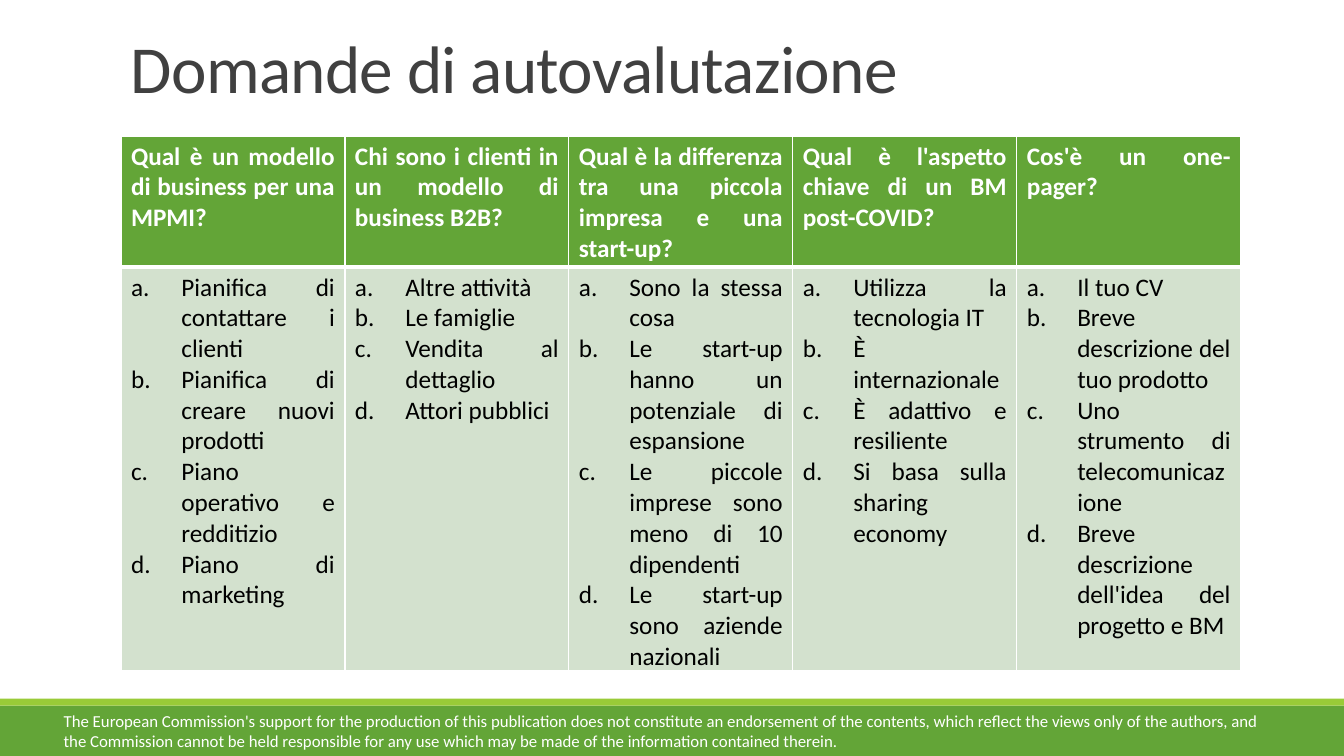
from pptx import Presentation, util as u
from pptx.dml.color import RGBColor
from pptx.enum import shapes, text
from pptx.oxml import parse_xml
from pptx.oxml.ns import nsdecls

WIDE, HIGH = u.Inches(13.33), u.Inches(7.5)
GREEN, LIME, PALE, WHITE = "63A537", "99CB38", "D3E1CE", "FFFFFF"
TITLE = "Domande di autovalutazione"
NOTE = ("The European Commission's support for the production of this publication "
        "does not constitute an endorsement of the contents, which reflect the views "
        "only of the authors, and the Commission cannot be held responsible for any "
        "use which may be made of the information contained therein.")
QUIZ = {
    "Qual è un modello di business per una MPMI?": [
        "Pianifica di contattare i clienti", "Pianifica di creare nuovi prodotti",
        "Piano operativo e redditizio", "Piano di marketing"],
    "Chi sono i clienti in un modello di business B2B?": [
        "Altre attività", "Le famiglie", "Vendita al dettaglio", "Attori pubblici"],
    "Qual è la differenza tra una piccola impresa e una start-up?": [
        "Sono la stessa cosa", "Le start-up hanno un potenziale di espansione",
        "Le piccole imprese sono meno di 10 dipendenti",
        "Le start-up sono aziende nazionali"],
    "Qual è l'aspetto chiave di un BM post-COVID?": [
        "Utilizza la tecnologia IT", "È internazionale",
        "È adattivo e resiliente", "Si basa sulla sharing economy"],
    "Cos'è un one-pager?": [
        "Il tuo CV", "Breve descrizione del tuo prodotto",
        "Uno strumento di telecomunicazione",
        "Breve descrizione dell'idea del progetto e BM"],
}


def paint(item, tone):
    """Give a fill or a font a solid colour."""
    if hasattr(item, "solid"):
        item.solid()
        item = item.fore_color
    else:
        item = item.color
    item.rgb = RGBColor.from_string(tone)


def place(left, top, wide, high):
    """Turn percentages of the slide into lengths."""
    return (int(WIDE * left / 100), int(HIGH * top / 100),
            int(WIDE * wide / 100), int(HIGH * high / 100))


def style(para, size, tone, bold=False):
    """Set the font of a paragraph."""
    font = para.font
    font.name, font.size, font.bold = "Calibri", u.Pt(size), bold
    paint(font, tone)


def add_bar(slide, spot, tone):
    """Draw a plain band."""
    bar = slide.shapes.add_shape(shapes.MSO_SHAPE.RECTANGLE, *place(*spot))
    bar.shadow.inherit = False
    paint(bar.fill, tone)
    bar.line.fill.background()


def add_text(slide, spot, words, size, tone):
    """Add a wrapped text box and return its frame."""
    frame = slide.shapes.add_textbox(*place(*spot)).text_frame
    frame.word_wrap = True
    frame.text = words
    style(frame.paragraphs[0], size, tone)
    return frame


def add_title(slide):
    """Add the large heading, set tight on its base."""
    frame = add_text(slide, (9, -6.4, 82.5, 21.2), TITLE, 48, "404040")
    frame.vertical_anchor = text.MSO_ANCHOR.BOTTOM
    para = frame.paragraphs[0]
    para.line_spacing = 0.85
    para.runs[0].font._element.set("spc", "-50")


def edge(cell, sides):
    """Draw white borders with the given widths in points."""
    props = cell._tc.get_or_add_tcPr()
    for spot, (side, width) in enumerate(sides.items()):
        props.insert(spot, parse_xml(
            f'<a:ln{side} {nsdecls("a")} w="{u.Pt(width)}"><a:solidFill>'
            f'<a:srgbClr val="{WHITE}"/></a:solidFill></a:ln{side}>'))


def fill_cell(cell, lines, tone, ink, head):
    """Write justified lines, lettered below the header."""
    cell.text = "\n".join(lines)
    for para in cell.text_frame.paragraphs:
        para.alignment = text.PP_ALIGN.JUSTIFY
        style(para, 18, ink, head)
        if not head:
            props = para._p.get_or_add_pPr()
            props.set("marL", str(u.Inches(0.5)))
            props.set("indent", str(u.Inches(-0.5)))
            props.insert(0, parse_xml(
                f'<a:buAutoNum {nsdecls("a")} type="alphaLcPeriod"/>'))
    paint(cell.fill, tone)
    edge(cell, {"L": 1, "R": 1, "T": 1 if head else 3, "B": 3 if head else 1})


def add_quiz(slide):
    """Build the table with one question per column."""
    spot = place(9, 18, 83.33, 70.67)
    grid = slide.shapes.add_table(2, len(QUIZ), *spot).table
    for row, share in zip(grid.rows, (17.33, 53.33)):
        row.height = int(HIGH * share / 100)
    for col, (ask, picks) in enumerate(QUIZ.items()):
        fill_cell(grid.cell(0, col), [ask], GREEN, WHITE, True)
        fill_cell(grid.cell(1, col), picks, PALE, "000000", False)


def main():
    """Build and save the slide."""
    deck = Presentation()
    deck.slide_width, deck.slide_height = WIDE, HIGH
    slide = deck.slides.add_slide(deck.slide_layouts[6])
    add_bar(slide, (0, 93.33, 100, 6.67), GREEN)
    add_bar(slide, (0, 92.4, 100, 0.93), LIME)
    add_title(slide)
    add_text(slide, (4, 93.33, 92.25, 6.67), NOTE, 12, WHITE)
    add_quiz(slide)
    deck.save("out.pptx")


if __name__ == "__main__":
    main()
